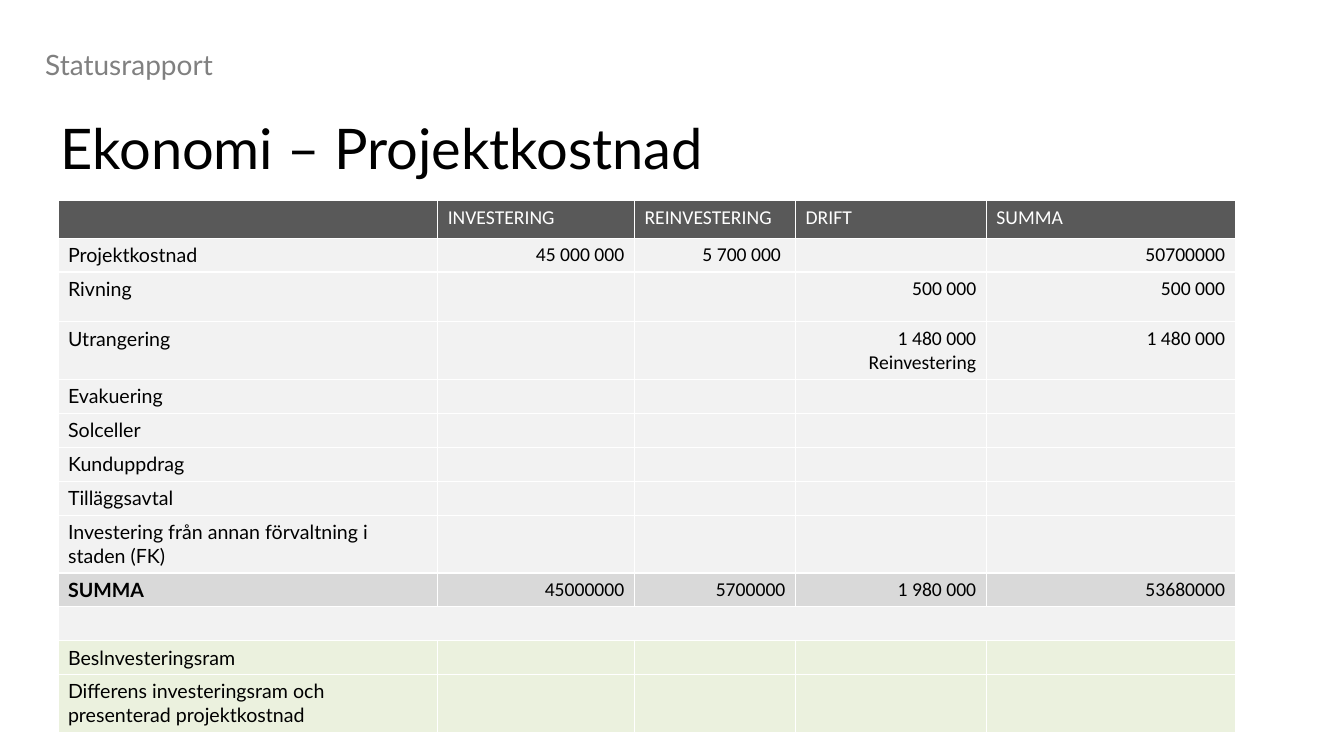
from pptx import Presentation
from pptx.dml.color import RGBColor
from pptx.enum.text import MSO_ANCHOR, MSO_AUTO_SIZE, PP_ALIGN
from pptx.util import Cm, Pt

BLACK = RGBColor(0x00, 0x00, 0x00)
WHITE = RGBColor(0xFF, 0xFF, 0xFF)
GREY = RGBColor(0x80, 0x80, 0x80)
HEADER = RGBColor(0x59, 0x59, 0x59)
PLAIN = RGBColor(0xF2, 0xF2, 0xF2)
TOTAL = RGBColor(0xD9, 0xD9, 0xD9)
GREEN = RGBColor(0xEB, 0xF1, 0xDE)

# Content: fill, row height in cm, cell texts
SECTION = "Statusrapport"
TITLE = "Ekonomi – Projektkostnad"
COLUMN_WIDTHS = [9.57, 4.96, 4.06, 4.81, 6.27]
LOW, MEDIUM, HIGH = 0.85, 1.25, 1.45
ROWS = [
    (HEADER, 0.94, ["", "INVESTERING", "REINVESTERING", "DRIFT", "SUMMA"]),
    (PLAIN, LOW, ["Projektkostnad", "45 000 000", "5 700 000 ", "", "50700000"]),
    (PLAIN, MEDIUM, ["Rivning", "", "", "500 000", "500 000"]),
    (PLAIN, HIGH, ["Utrangering", "", "", "1 480 000 Reinvestering", "1 480 000"]),
    (PLAIN, LOW, ["Evakuering"]),
    (PLAIN, LOW, ["Solceller"]),
    (PLAIN, LOW, ["Kunduppdrag"]),
    (PLAIN, LOW, ["Tilläggsavtal"]),
    (PLAIN, HIGH, ["Investering från annan förvaltning i staden (FK)"]),
    (TOTAL, LOW, ["SUMMA", "45000000", "5700000", "1 980 000", "53680000"]),
    (PLAIN, LOW, []),
    (GREEN, LOW, ["Beslnvesteringsram"]),
    (GREEN, HIGH, ["Differens investeringsram och presenterad projektkostnad"]),
]
SPACER_ROW = 10


def write(p, text, size, font, color, align=PP_ALIGN.LEFT, bold=False):
    p.alignment = align
    p.font.size = Pt(size)
    p.font.name = font
    p.font.bold = bold
    p.font.color.rgb = color
    if text:
        p.add_run().text = text
    else:
        # Keeps empty cells from growing to the default size
        p._p.get_or_add_endParaRPr().set("sz", str(size * 100))


prs = Presentation()
prs.slide_width, prs.slide_height = Cm(33.87), Cm(19.05)
s = prs.slides.add_slide(prs.slide_layouts[5])

# Section label and title
label = s.shapes.add_textbox(Cm(0.89), Cm(1.07), Cm(16.61), Cm(1.11))
title = s.shapes.title
title.left, title.top, title.width, title.height = Cm(1.27), Cm(2.74), Cm(25.65), Cm(1.96)
for sp, text, size, color in [(label, SECTION, 20, GREY), (title, TITLE, 40, BLACK)]:
    tf = sp.text_frame
    tf.word_wrap = True
    tf.auto_size = MSO_AUTO_SIZE.NONE
    tf.vertical_anchor = MSO_ANCHOR.TOP
    write(tf.paragraphs[0], text, size, "Lato", color)

# Cost table
table = s.shapes.add_table(len(ROWS), len(COLUMN_WIDTHS), Cm(1.46), Cm(5.06),
                           Cm(sum(COLUMN_WIDTHS)), Cm(sum(h for _, h, _ in ROWS))).table
table.horz_banding = False
for column, width in zip(table.columns, COLUMN_WIDTHS):
    column.width = Cm(width)

for i, (fill, height, texts) in enumerate(ROWS):
    table.rows[i].height = Cm(height)
    for j in range(len(COLUMN_WIDTHS)):
        cell = table.cell(i, j)
        cell.fill.solid()
        cell.fill.fore_color.rgb = fill
        is_header, is_label = i == 0, j == 0
        write(cell.text_frame.paragraphs[0],
              texts[j] if j < len(texts) else "", 14,
              "Lato" if is_label else "Calibri",
              WHITE if is_header else BLACK,
              PP_ALIGN.LEFT if is_header or is_label else PP_ALIGN.RIGHT,
              bold=is_label and fill == TOTAL)
table.cell(SPACER_ROW, 0).merge(table.cell(SPACER_ROW, len(COLUMN_WIDTHS) - 1))

prs.save("out.pptx")
